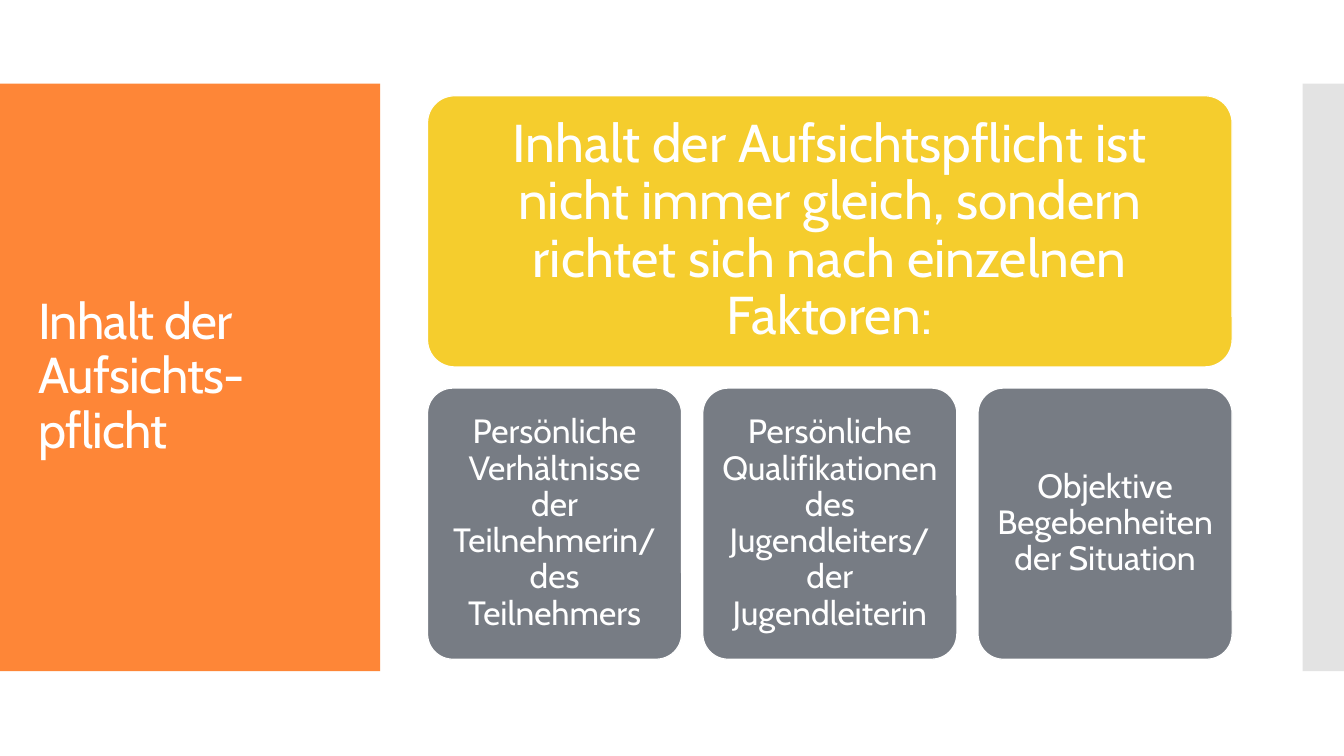
from lxml import etree
from pptx import Presentation
from pptx import util as u
from pptx.dml.color import RGBColor
from pptx.enum import shapes, text
from pptx.oxml import ns

PX = 9144  # EMU per px, 100 px to the inch
FONT = "Cabin"
COLORS = {
    "panel": "FE8637",
    "edge": "C8C8C8",
    "statement": "F5CD2D",
    "factor": "777C84",
    "light": "FFFFFF",
}
STATEMENT = (
    "Inhalt der Aufsichtspflicht ist nicht immer gleich, "
    "sondern richtet sich nach einzelnen Faktoren:"
)
FACTORS = [
    "Persönliche Verhältnisse der Teilnehmerin/ des Teilnehmers",
    "Persönliche Qualifikationen des Jugendleiters/ der Jugendleiterin",
    "Objektive Begebenheiten der Situation",
]


def apply(target, **values):
    for name, value in values.items():
        setattr(target, name, value)


class SlideStyle:
    def __init__(self, deck):
        self.slide = deck.slides.add_slide(deck.slide_layouts[5])

    def color(self, name):
        return RGBColor.from_string(COLORS[name])

    def label(self, shape, words, size, align, inset):
        frame = shape.text_frame
        frame.text = words
        apply(frame, word_wrap=True, auto_size=text.MSO_AUTO_SIZE.NONE,
              vertical_anchor=text.MSO_ANCHOR.MIDDLE,
              **{f"margin_{side}": inset * PX
                 for side in ("left", "top", "right", "bottom")})
        paragraph = frame.paragraphs[0]
        apply(paragraph, alignment=align, line_spacing=0.9)
        run = paragraph.runs[0]
        apply(run.font, name=FONT, size=u.Pt(size), bold=False)
        run.font.color.rgb = self.color("light")
        return run

    def block(self, kind, box, fill):
        shape = self.slide.shapes.add_shape(kind, *(n * PX for n in box))
        shape.shadow.inherit = False
        shape.fill.solid()
        shape.fill.fore_color.rgb = self.color(fill)
        return shape

    def band(self, box, fill, opacity=100):
        band = self.block(shapes.MSO_SHAPE.RECTANGLE, box, fill)
        band.line.fill.background()
        if opacity < 100:
            tone = band._element.spPr.find(".//" + ns.qn("a:srgbClr"))
            etree.SubElement(tone, ns.qn("a:alpha"), val=str(opacity * 1000))

    def card(self, box, fill, words, size, inset):
        card = self.block(shapes.MSO_SHAPE.ROUNDED_RECTANGLE, box, fill)
        card.adjustments[0] = 0.1
        card.line.color.rgb = self.color("light")
        card.line.width = u.Pt(0.85)
        self.label(card, words, size, text.PP_ALIGN.CENTER, inset)

    def title(self, box, words):
        """Fill the title placeholder and bring it in front of the bands."""
        title = self.slide.shapes.title
        apply(title, **dict(zip(("left", "top", "width", "height"),
                                (n * PX for n in box))))
        run = self.label(title, words, 36, text.PP_ALIGN.LEFT, 10)
        run.font._element.set("spc", "-60")
        self.slide.shapes._spTree.append(title._element)


def main():
    deck = Presentation()
    apply(deck, slide_width=1333 * PX, slide_height=750 * PX)
    style = SlideStyle(deck)

    style.band((0, 83, 377, 583), "panel")
    style.band((1292, 83, 41, 583), "edge", opacity=50)
    style.title((28, 123, 322, 503), "Inhalt der Aufsichts-pflicht")

    left, width, height, pitch = 424, 252, 269, 273
    full_width = pitch * (len(FACTORS) - 1) + width
    style.card((left, 95, full_width, height), "statement", STATEMENT, 38, 16)
    for column, factor in enumerate(FACTORS):
        style.card((left + column * pitch, 385, width, height),
                   "factor", factor, 24, 10)

    deck.save("out.pptx")


if __name__ == "__main__":
    main()
